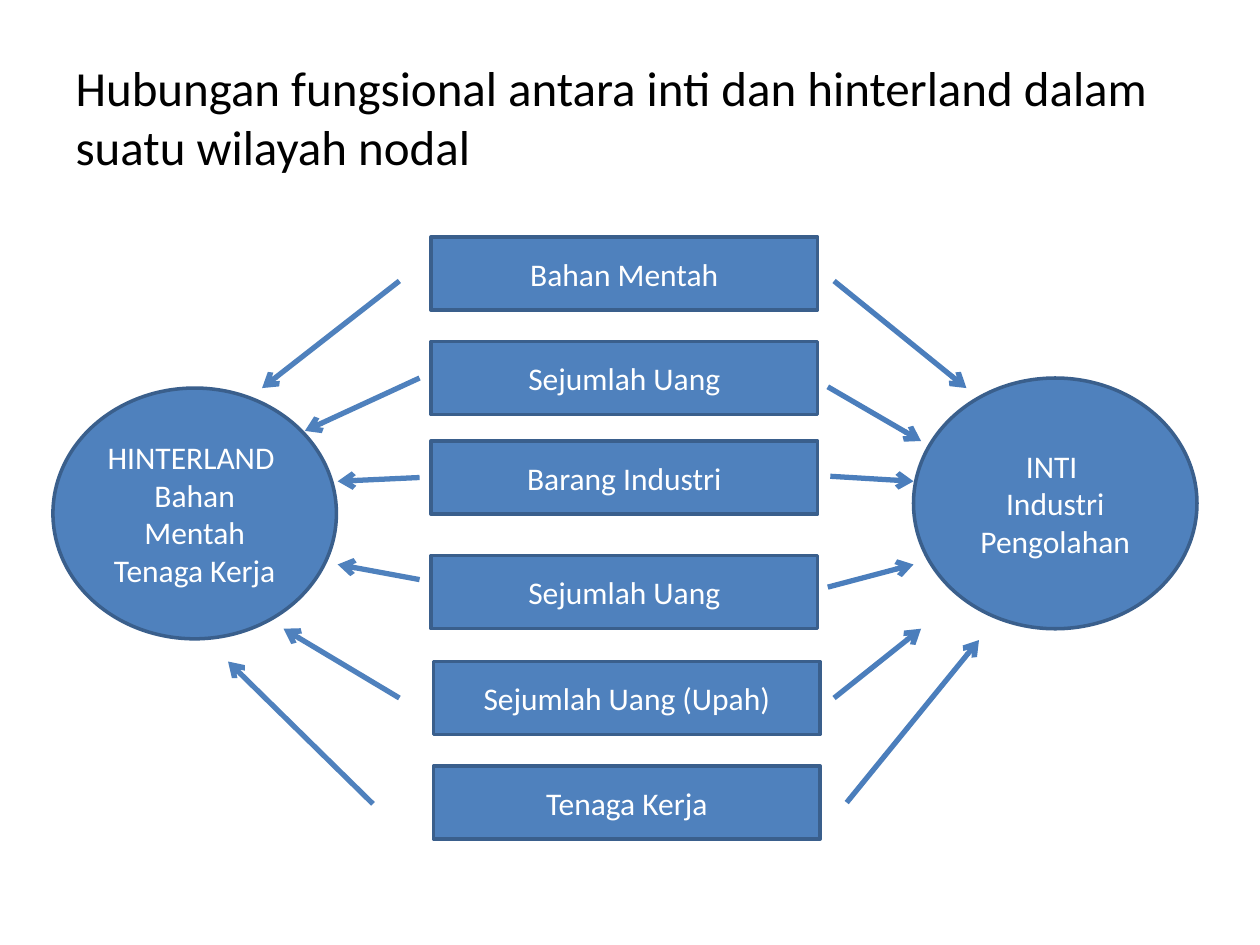
import pptx
import pptx.util
import pptx.dml.color
import pptx.enum.shapes
import pptx.enum.text
import pptx.oxml
import pptx.oxml.ns

Inches, Pt = pptx.util.Inches, pptx.util.Pt
SHAPE = pptx.enum.shapes.MSO_SHAPE
FONT = "Calibri"
COLORS = {"fill": "4F81BD", "outline": "3A5F8C", "to_hinterland": "4F81BD",
          "to_core": "4B7EBC", "title": "000000", "label": "FFFFFF"}

TITLE = "Hubungan fungsional antara inti dan hinterland dalam suatu wilayah nodal"
REGIONS = [  # text, left, top
    ("HINTERLAND \nBahan Mentah Tenaga Kerja", 0.42, 3.08),
    ("INTI \nIndustri Pengolahan", 7.25, 3.0),
]
REGION_SIZE = (2.25, 1.99)
FLOW_SIZE = (3.07, 0.58)
FLOWS = [  # label, left, top, arrow to hinterland, arrow to core (from, to)
    ("Bahan Mentah", 3.42, 1.88, ((3.17, 2.23), (2.08, 3.08)), ((6.62, 2.23), (7.67, 3.08))),
    ("Sejumlah Uang", 3.42, 2.71, ((3.33, 3.0), (2.42, 3.42)), ((6.57, 3.07), (7.31, 3.5))),
    ("Barang Industri", 3.42, 3.5, ((3.33, 3.79), (2.68, 3.82)), ((6.59, 3.78), (7.25, 3.82))),
    ("Sejumlah Uang", 3.42, 4.41, ((3.33, 4.6), (2.68, 4.48)), ((6.57, 4.66), (7.25, 4.48))),
    ("Sejumlah Uang (Upah)", 3.44, 5.25, ((3.17, 5.54), (2.25, 4.99)), ((6.62, 5.54), (7.31, 4.99))),
    ("Tenaga Kerja", 3.44, 6.08, ((2.96, 6.38), (1.81, 5.25)), ((6.72, 6.37), (7.77, 5.08))),
]


def rgb(name):
    return pptx.dml.color.RGBColor.from_string(COLORS[name])


def write(frame, text, size, color, align):
    frame.text = text
    frame.word_wrap = True
    frame.vertical_anchor = pptx.enum.text.MSO_ANCHOR.MIDDLE
    for paragraph in frame.paragraphs:
        paragraph.alignment = align
        for run in paragraph.runs:
            run.font.name = FONT
            run.font.size = Pt(size)
            run.font.color.rgb = rgb(color)


def add_node(slide, kind, text, left, top, size):
    node = slide.shapes.add_shape(kind, *map(Inches, (left, top, *size)))
    node.shadow.inherit = False
    node.fill.solid()
    node.fill.fore_color.rgb = rgb("fill")
    node.line.color.rgb = rgb("outline")
    node.line.width = Pt(2)
    write(node.text_frame, text, 18, "label", pptx.enum.text.PP_ALIGN.CENTER)


def add_arrow(slide, start, end, color):
    arrow = slide.shapes.add_connector(
        pptx.enum.shapes.MSO_CONNECTOR.STRAIGHT, *map(Inches, (*start, *end)))
    arrow.line.color.rgb = rgb(color)
    arrow.line.width = Pt(3)
    head = pptx.oxml.parse_xml(
        f'<a:tailEnd {pptx.oxml.ns.nsdecls("a")} type="arrow"/>')
    arrow.line._get_or_add_ln().append(head)
    arrow._element.spPr.append(
        pptx.oxml.parse_xml(f'<a:effectLst {pptx.oxml.ns.nsdecls("a")}/>'))


def main():
    deck = pptx.Presentation()
    deck.slide_width, deck.slide_height = Inches(10), Inches(7.5)
    slide = deck.slides.add_slide(deck.slide_layouts[5])

    title = slide.shapes.title
    title.left, title.top, title.width, title.height = map(Inches, (0.5, 0.3, 9, 1.25))
    write(title.text_frame, TITLE, 28, "title", pptx.enum.text.PP_ALIGN.LEFT)

    for text, left, top in REGIONS:
        add_node(slide, SHAPE.OVAL, text, left, top, REGION_SIZE)
    for label, left, top, to_hinterland, to_core in FLOWS:
        add_node(slide, SHAPE.RECTANGLE, label, left, top, FLOW_SIZE)
        add_arrow(slide, *to_hinterland, "to_hinterland")
        add_arrow(slide, *to_core, "to_core")

    deck.save("out.pptx")


if __name__ == "__main__":
    main()
